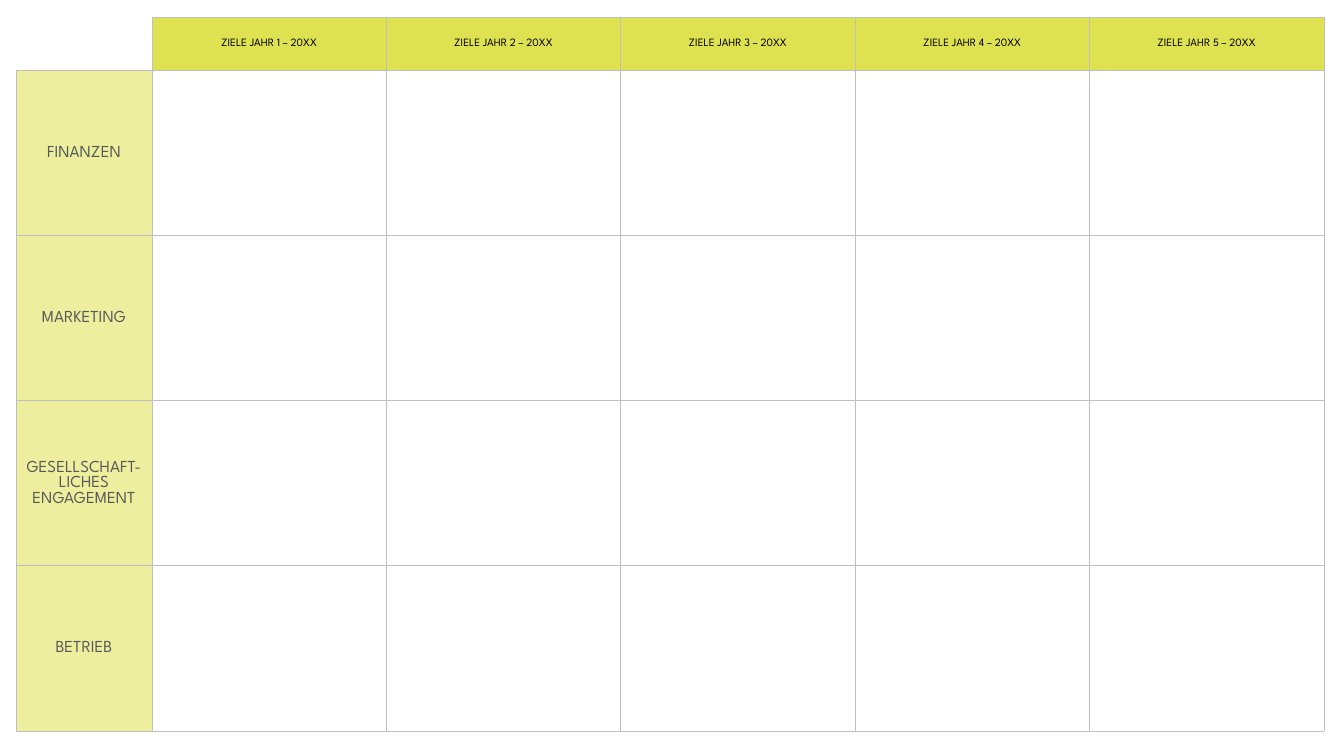
from lxml import etree
from pptx import Presentation
from pptx.dml.color import RGBColor
from pptx.enum.text import MSO_ANCHOR, PP_ALIGN
from pptx.oxml.ns import qn
from pptx.util import Emu, Pt

PX_PER_INCH = 100.8
LIME = RGBColor(0xDF, 0xE2, 0x50)
PALE_LIME = RGBColor(0xED, 0xEF, 0x9F)
BLACK = RGBColor(0x00, 0x00, 0x00)
DARK_GREY = RGBColor(0x59, 0x59, 0x59)
BORDER_GREY = RGBColor(0xBF, 0xBF, 0xBF)

YEARS = 5
AREAS = ["FINANZEN", "MARKETING", "GESELLSCHAFT-LICHES ENGAGEMENT", "BETRIEB"]
YEAR_FONT = {"name": "League Spartan", "size": Pt(8), "bold": False}
AREA_FONT = {**YEAR_FONT, "size": Pt(12)}
LABEL_FORMAT = {
    "vertical_anchor": MSO_ANCHOR.MIDDLE,
    "margin_left": Emu(9144),
    "margin_right": Emu(9144),
    "margin_top": Emu(9144),
    "margin_bottom": Emu(0),
}


def px(length):
    return Emu(round(length * 914400 / PX_PER_INCH))


def set_attributes(target, values):
    for attribute, value in values.items():
        setattr(target, attribute, value)


def draw_borders(cell, visible="LRTB"):
    """Draw the sides named in visible and clear the others."""
    properties = cell._tc.get_or_add_tcPr()
    for side in "LRTB":
        line = etree.SubElement(properties, qn(f"a:ln{side}"), w=str(Pt(0.5)))
        if side in visible:
            fill = etree.SubElement(line, qn("a:solidFill"))
            etree.SubElement(fill, qn("a:srgbClr"), val=str(BORDER_GREY))
        else:
            etree.SubElement(line, qn("a:noFill"))


def write_label(cell, text, font, color, fill):
    set_attributes(cell, LABEL_FORMAT)
    cell.fill.solid()
    cell.fill.fore_color.rgb = fill
    paragraph = cell.text_frame.paragraphs[0]
    paragraph.alignment = PP_ALIGN.CENTER
    run = paragraph.add_run()
    run.text = text
    set_attributes(run.font, font)
    run.font.color.rgb = color


def add_goal_grid(slide):
    grid = slide.shapes.add_table(
        len(AREAS) + 1, YEARS + 1, px(16), px(17), px(1308), px(714)
    ).table
    set_attributes(grid, {"first_row": False, "horz_banding": False})

    for index, column in enumerate(grid.columns):
        column.width = px(1172 / YEARS) if index else px(136)
    for index, row in enumerate(grid.rows):
        row.height = px(661 / len(AREAS)) if index else px(53)

    corner = grid.cell(0, 0)
    for cell in grid.iter_cells():
        draw_borders(cell, "RB" if cell == corner else "LRTB")
        cell.fill.background()

    for year in range(1, YEARS + 1):
        title = f"ZIELE JAHR {year} – 20XX"
        write_label(grid.cell(0, year), title, YEAR_FONT, BLACK, LIME)
    for index, area in enumerate(AREAS, 1):
        write_label(grid.cell(index, 0), area, AREA_FONT, DARK_GREY, PALE_LIME)


def main():
    presentation = Presentation()
    presentation.slide_width = px(1344)
    presentation.slide_height = px(756)
    slide = presentation.slides.add_slide(presentation.slide_layouts[6])
    add_goal_grid(slide)
    presentation.save("out.pptx")


if __name__ == "__main__":
    main()
